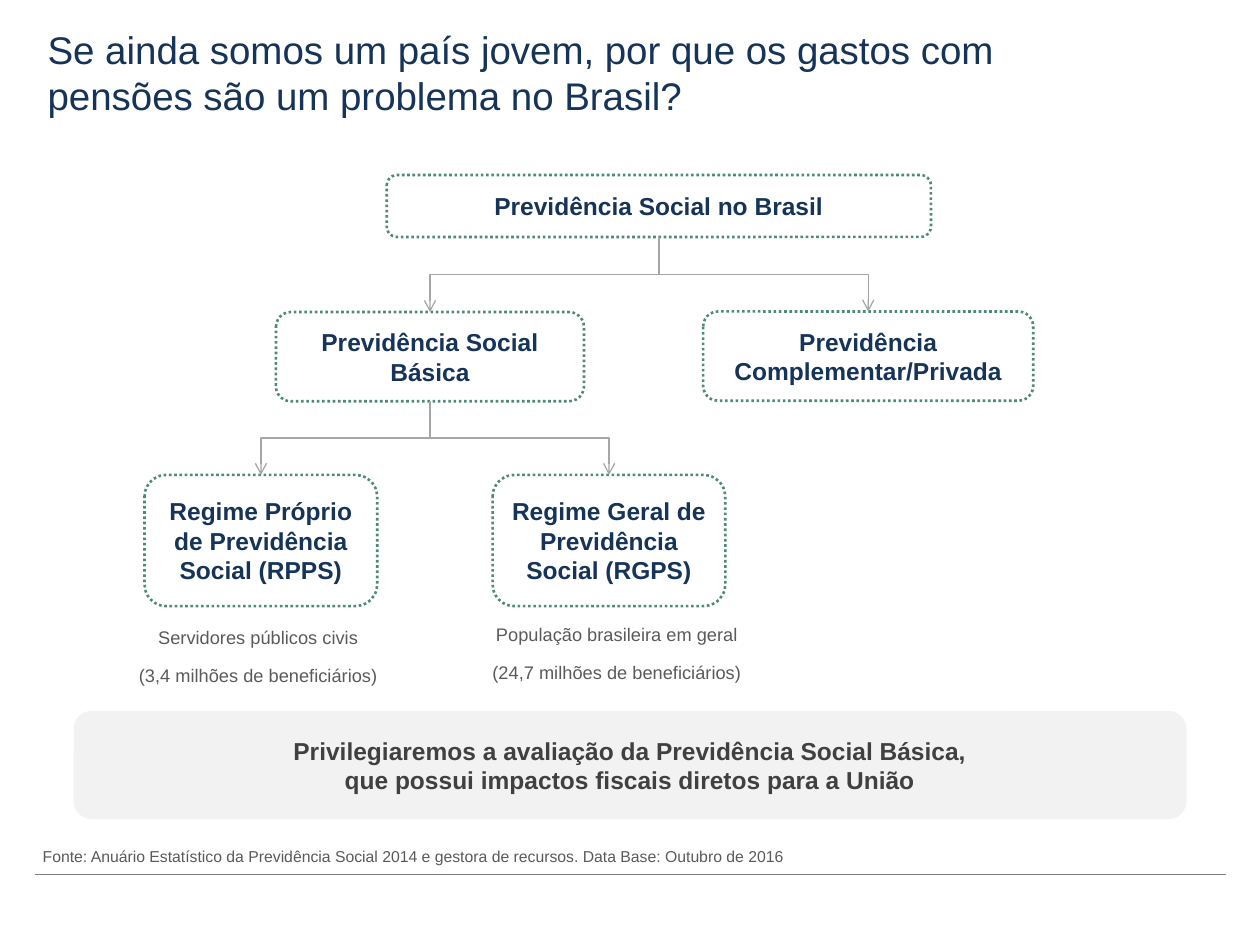
from lxml import etree
from pptx import Presentation
from pptx.dml.color import RGBColor
from pptx.enum.dml import MSO_LINE
from pptx.enum.shapes import MSO_CONNECTOR, MSO_SHAPE
from pptx.enum.text import MSO_ANCHOR, MSO_AUTO_SIZE, PP_ALIGN
from pptx.oxml.ns import qn
from pptx.util import Pt

ROUNDED = MSO_SHAPE.ROUNDED_RECTANGLE
ELBOW = MSO_CONNECTOR.ELBOW
STRAIGHT = MSO_CONNECTOR.STRAIGHT
DOTTED = MSO_LINE.ROUND_DOT
MIDDLE = MSO_ANCHOR.MIDDLE
TOP = MSO_ANCHOR.TOP
FIXED = MSO_AUTO_SIZE.NONE
LEFT = PP_ALIGN.LEFT
CENTER = PP_ALIGN.CENTER
TOP_SITE, BOTTOM_SITE = 0, 2
TITLE_ONLY = 5

FONT = "Arial"
COLORS = {
    "navy": "163358",
    "green": "4D8B74",
    "white": "FFFFFF",
    "banner": "F2F2F2",
    "banner_text": "404040",
    "note": "5A5A5A",
    "arrow": "A6A6A6",
    "rule": "808080",
}


def color(name):
    return RGBColor.from_string(COLORS[name])


def write(box, paragraphs, size, color_name, bold=False, align=CENTER, anchor=MIDDLE, wrap=True):
    frame = box.text_frame
    frame.text = "\n".join(paragraphs)
    frame.word_wrap = wrap
    frame.auto_size = FIXED
    frame.vertical_anchor = anchor
    for para in frame.paragraphs:
        para.alignment = align
        para.font.name = FONT
        para.font.size = Pt(size)
        para.font.bold = bold
        para.font.color.rgb = color(color_name)


def add_title(page, text):
    title = page.shapes.title
    title.left, title.top, title.width, title.height = Pt(20), Pt(10), Pt(628), Pt(62)
    write(title, [text], 22, "navy", align=LEFT)


def add_panel(page, bounds, text, fill, text_color, outline=None):
    panel = page.shapes.add_shape(ROUNDED, *map(Pt, bounds))
    panel.shadow.inherit = False
    panel.fill.solid()
    panel.fill.fore_color.rgb = color(fill)
    if outline:
        panel.line.color.rgb = color(outline)
        panel.line.width = Pt(1.5)
        panel.line.dash_style = DOTTED
    else:
        panel.line.fill.background()
    write(panel, [text], 14, text_color, bold=True)
    return panel


def add_node(page, bounds, text):
    return add_panel(page, bounds, text, "white", "navy", "green")


def style_line(line, color_name):
    line.line.color.rgb = color(color_name)
    line.line.width = Pt(0.75)
    etree.SubElement(line._element.spPr, qn("a:effectLst"))


def add_branch(page, parent, child):
    start_x, start_y = parent.left + parent.width // 2, parent.top + parent.height
    end_x, end_y = child.left + child.width // 2, child.top
    branch = page.shapes.add_connector(ELBOW, start_x, start_y, end_x, end_y)
    branch.begin_connect(parent, BOTTOM_SITE)
    branch.end_connect(child, TOP_SITE)
    branch.width, branch.height = end_y - start_y, abs(end_x - start_x)
    branch.left = (start_x + end_x - branch.width) // 2
    branch.top = (start_y + end_y - branch.height) // 2
    goes_right = end_x > start_x
    transform = branch._element.spPr.find(qn("a:xfrm"))
    transform.set("rot", "16200000" if goes_right else "5400000")
    transform.set("flipH", "1" if goes_right else "0")
    transform.set("flipV", "0")
    style_line(branch, "arrow")
    outline = branch._element.spPr.find(qn("a:ln"))
    etree.SubElement(outline, qn("a:tailEnd"), type="arrow")


def add_caption(page, bounds, paragraphs):
    box = page.shapes.add_textbox(*map(Pt, bounds))
    write(box, paragraphs, 18, "note", anchor=TOP)
    for para in box.text_frame.paragraphs:
        for span in para.runs:
            span._r.get_or_add_rPr().set("baseline", "30000")


def add_source(page, text):
    rule = page.shapes.add_connector(STRAIGHT, Pt(20), Pt(499.7), Pt(700.5), Pt(499.7))
    style_line(rule, "rule")
    box = page.shapes.add_textbox(Pt(17.3), Pt(480.2), Pt(458), Pt(18))
    write(box, [text], 9, "note", align=LEFT, anchor=TOP, wrap=False)


def main():
    deck = Presentation()
    deck.slide_width, deck.slide_height = Pt(720), Pt(540)
    page = deck.slides.add_slide(deck.slide_layouts[TITLE_ONLY])

    add_title(page, "Se ainda somos um país jovem, por que os gastos com pensões são um problema no Brasil?")

    system = add_node(page, (221, 100, 311, 35.4), "Previdência Social no Brasil")
    basic = add_node(page, (157.7, 178.3, 176, 51), "Previdência Social Básica")
    private = add_node(page, (401.8, 178, 188.6, 51), "Previdência Complementar/Privada")
    civil = add_node(page, (82.6, 271.4, 133, 75), "Regime Próprio de Previdência Social (RPPS)")
    general = add_node(page, (281.5, 271.4, 133, 75), "Regime Geral de Previdência Social (RGPS)")

    for parent, children in ((system, (basic, private)), (basic, (civil, general))):
        for child in children:
            add_branch(page, parent, child)

    add_caption(page, (55.4, 352, 184.3, 36),
                ["Servidores públicos civis", "(3,4 milhões de beneficiários)"])
    add_caption(page, (255.6, 350.6, 193.7, 51),
                ["População brasileira em geral", "(24,7 milhões de beneficiários)"])
    add_panel(page, (42, 406.3, 636, 61.7),
              "Privilegiaremos a avaliação da Previdência Social Básica,\v"
              "que possui impactos fiscais diretos para a União",
              "banner", "banner_text")
    add_source(page, "Fonte: Anuário Estatístico da Previdência Social 2014 e gestora de recursos. "
                     "Data Base: Outubro de 2016")

    deck.save("out.pptx")


if __name__ == "__main__":
    main()
